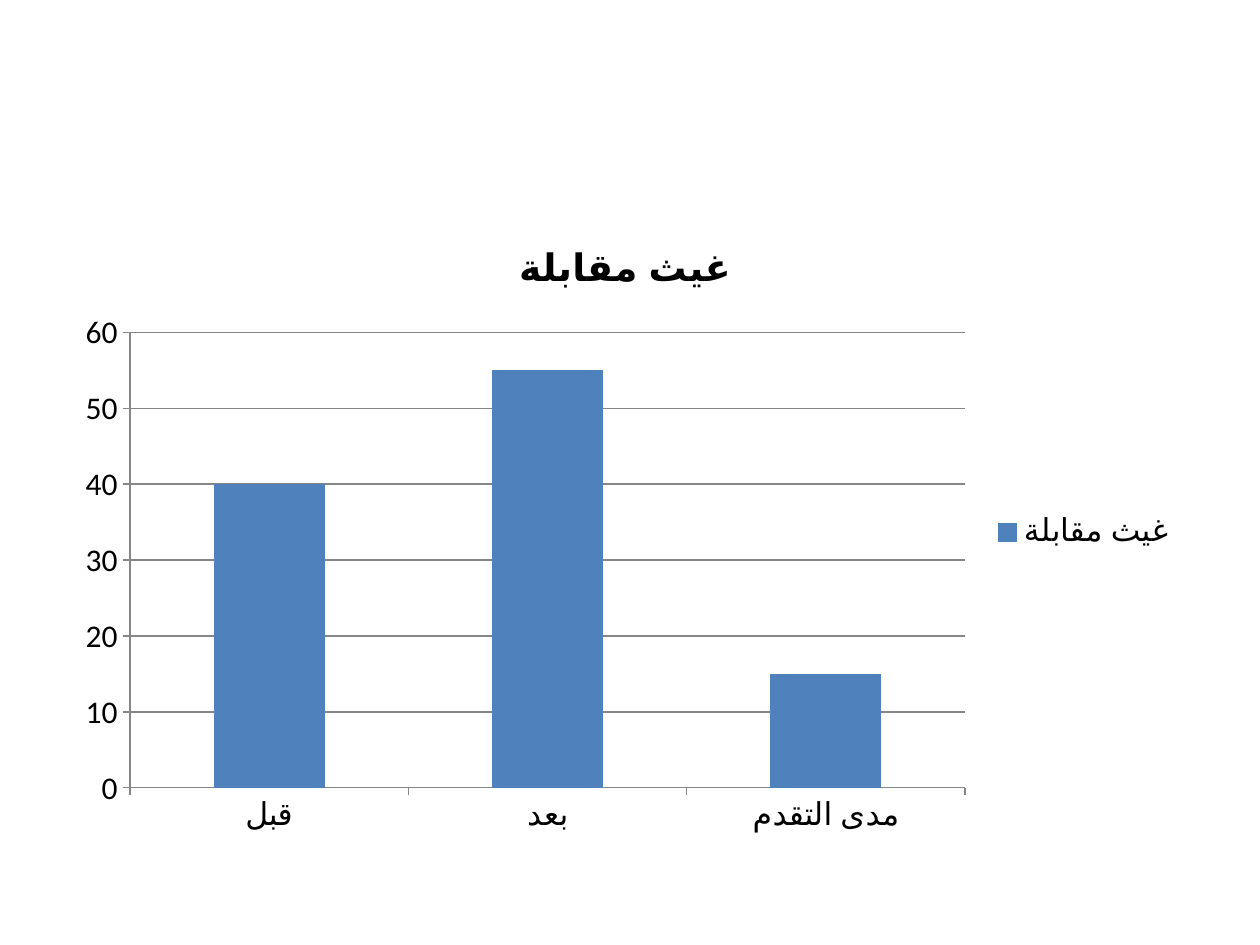
from typing import NamedTuple

from pptx import Presentation
from pptx.chart.data import CategoryChartData
from pptx.dml.color import RGBColor
from pptx.enum.chart import XL_CHART_TYPE, XL_LEGEND_POSITION, XL_TICK_MARK
from pptx.util import Cm, Pt

COLUMN = XL_CHART_TYPE.COLUMN_CLUSTERED
RIGHT = XL_LEGEND_POSITION.RIGHT
OUTSIDE = XL_TICK_MARK.OUTSIDE

BLACK = RGBColor(0x00, 0x00, 0x00)
BLUE = RGBColor(0x4F, 0x81, 0xBD)
GRAY = RGBColor(0x86, 0x86, 0x86)
FONT = "Calibri"
NAME = "غيث مقابلة "


class Score(NamedTuple):
    label: str
    value: int


SCORES = [Score("قبل", 40), Score("بعد", 55), Score("مدى التقدم", 15)]


def style_font(font, size: float, bold: bool = False) -> None:
    font.name = FONT
    font.size = Pt(size)
    font.bold = bold
    font.color.rgb = BLACK


def style_line(line) -> None:
    line.color.rgb = GRAY
    line.width = Pt(0.75)


def add_score_chart(s, scores: list[Score]) -> None:
    data = CategoryChartData()
    data.categories = [score.label for score in scores]
    data.add_series(NAME, [score.value for score in scores])
    chart = s.shapes.add_chart(
        COLUMN, Cm(1.27), Cm(4.45), Cm(22.86), Cm(12.57), data
    ).chart
    style_font(chart.font, 18)

    # Title
    chart.has_title = True
    r = chart.chart_title.text_frame.paragraphs[0].add_run()
    r.text = NAME
    style_font(r.font, 21.6, bold=True)
    chart.chart_title.include_in_layout = False

    # Legend
    chart.has_legend = True
    chart.legend.position = RIGHT
    chart.legend.include_in_layout = False

    # Columns
    plot = chart.plots[0]
    plot.gap_width = 150
    plot.vary_by_categories = False
    fill = plot.series[0].format.fill
    fill.solid()
    fill.fore_color.rgb = BLUE

    # Axes
    for axis in (chart.category_axis, chart.value_axis):
        axis.major_tick_mark = OUTSIDE
        style_line(axis.format.line)
    axis = chart.value_axis
    axis.minimum_scale, axis.maximum_scale, axis.major_unit = 0, 60, 10
    axis.has_major_gridlines = True
    style_line(axis.major_gridlines.format.line)


def main() -> None:
    prs = Presentation()
    prs.slide_width, prs.slide_height = Cm(25.4), Cm(19.05)
    s = prs.slides.add_slide(prs.slide_layouts[6])
    add_score_chart(s, SCORES)
    prs.save("out.pptx")


if __name__ == "__main__":
    main()
